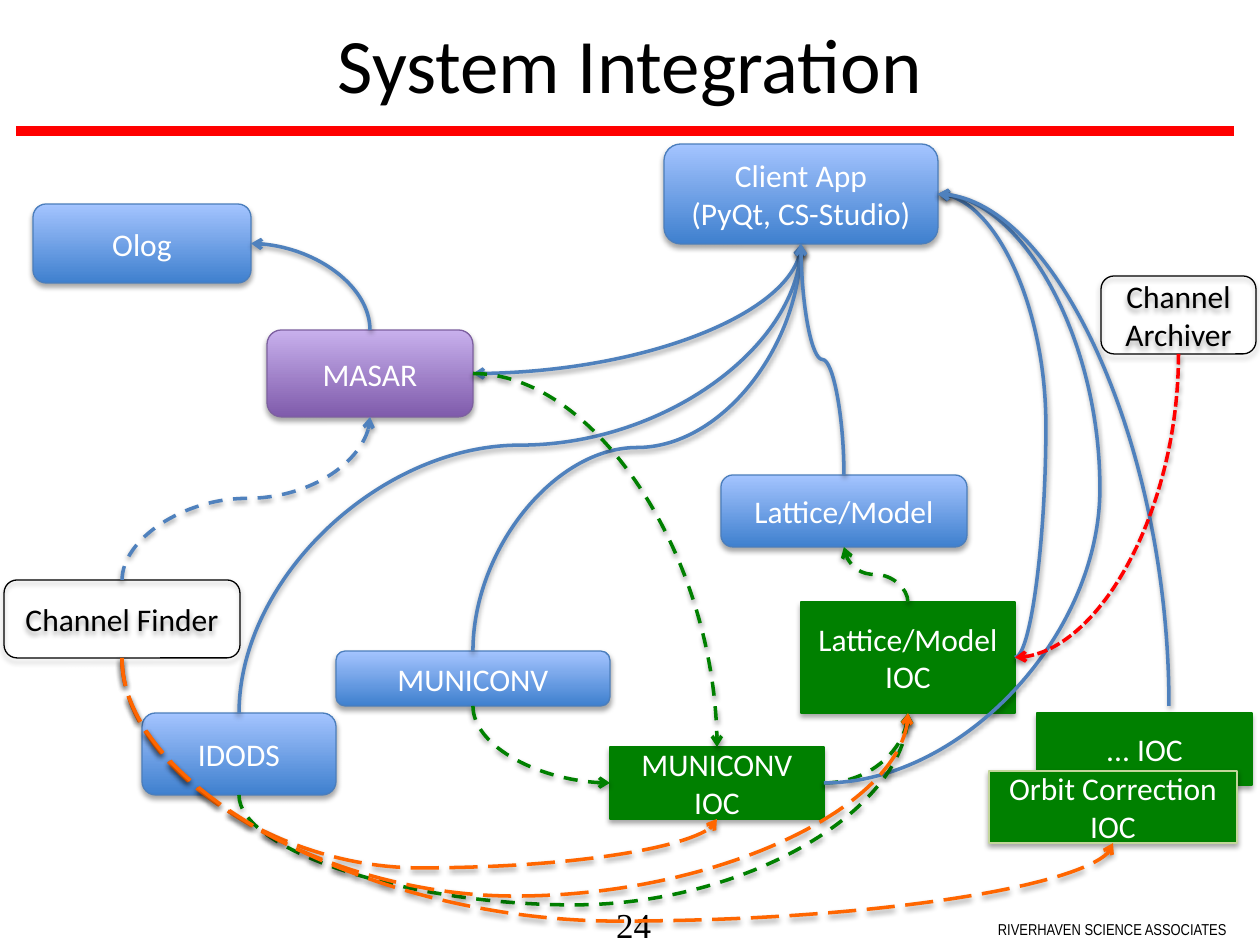
from dataclasses import dataclass

from lxml.etree import SubElement
from pptx import Presentation
from pptx.dml.color import RGBColor
from pptx.enum.dml import MSO_LINE
from pptx.enum.shapes import MSO_CONNECTOR, MSO_SHAPE
from pptx.enum.text import MSO_ANCHOR, PP_ALIGN
from pptx.oxml.ns import qn
from pptx.util import Pt

PX = 914400 / 126


@dataclass(frozen=True)
class Theme:
    font: str = "Calibri"
    black: str = "000000"
    white: str = "FFFFFF"
    red: str = "FF0000"
    blue: str = "4F81BD"
    green: str = "008000"
    orange: str = "FF6600"
    title: int = 44
    body: int = 18
    page: int = 20
    foot: int = 9


T = Theme()

# Box styles: shape, fill colours (bottom, top), line, line width, text
ROUND, RECT = MSO_SHAPE.ROUNDED_RECTANGLE, MSO_SHAPE.RECTANGLE
LOOKS = {
    "app": (ROUND, ("3F80CE", "A4C4FF"), "4B7EBC", 0.75, T.white),
    "core": (ROUND, ("7F5BAB", "C8B0ED"), "7D60A0", 0.75, T.white),
    "ioc": (RECT, (T.green,), T.green, 0.75, T.white),
    "orbit": (RECT, (T.green,), "C3D69B", 1, T.white),
    "plain": (ROUND, (), T.black, 0.75, T.black),
}

# Boxes: look, text, left, top, width, height
BOXES = {
    "idods": ("app", "IDODS", 142, 713, 194, 82),
    "masar": ("core", "MASAR", 267, 330, 206, 87),
    "model": ("app", "Lattice/Model", 721, 475, 246, 72),
    "muni": ("app", "MUNICONV", 336, 651, 274, 55),
    "client": ("app", "Client App\n(PyQt, CS-Studio)", 664, 144, 274, 100),
    "muni ioc": ("ioc", "MUNICONV\nIOC", 610, 747, 214, 72),
    "olog": ("app", "Olog", 33, 204, 218, 79),
    "model ioc": ("ioc", "Lattice/Model\nIOC", 801, 602, 214, 111),
    "more ioc": ("ioc", "... IOC", 1037, 713, 215, 72),
    "orbit": ("orbit", "Orbit Correction IOC", 989, 771, 248, 72),
    "finder": ("plain", "Channel Finder", 4, 580, 236, 78),
    "archive": ("plain", "Channel Archiver", 1101, 276, 155, 78),
}

# Link styles: colour, dash
LINKS = {
    "call": (T.blue, None),
    "find": (T.blue, MSO_LINE.DASH),
    "data": (T.green, MSO_LINE.DASH),
    "name": (T.orange, MSO_LINE.LONG_DASH),
    "log": (T.red, MSO_LINE.SQUARE_DOT),
}

# Curves: link style, start, end (box and side), options
CURVES = [
    ("find", "finder.t", "masar.b", {}),
    ("call", "client.b", "masar.r", {"both": True}),
    ("call", "idods.t", "client.b", {"bend": 445}),
    ("call", "muni.t", "client.b", {}),
    ("call", "model.t", "client.b", {}),
    ("call", "model ioc.r", "client.r", {"bend": 1046}),
    ("data", "muni ioc.r", "model ioc.b", {}),
    ("call", "masar.t", "olog.r", {}),
    ("call", "muni ioc.r", "client.r", {"bend": 1100}),
    ("data", "model ioc.t", "model.b", {}),
    ("data", "muni.b", "muni ioc.l", {}),
    ("data", "idods.b", "model ioc.b", {"bend": 905}),
    ("data", "masar.r", "muni ioc.t", {}),
    ("name", "finder.b", "muni ioc.b", {"bend": 868}),
    ("name", "finder.b", "model ioc.b", {"bend": 896}),
    ("name", "finder.b", "orbit.b", {"bend": 921}),
    ("call", (1169, 706, "t"), "client.r", {}),
    ("log", "archive.b", "model ioc.r", {}),
]


def px(*vals):
    return [round(v * PX) for v in vals]


def rgb(code):
    return RGBColor.from_string(code)


def write(frame, text, size=T.body, color=T.black, font=T.font,
          align=PP_ALIGN.CENTER, anchor=MSO_ANCHOR.MIDDLE, wrap=True):
    frame.word_wrap = wrap
    frame.vertical_anchor = anchor
    frame.text = text
    for para in frame.paragraphs:
        para.alignment = align
        para.font.size = Pt(size)
        para.font.name = font
        para.font.color.rgb = rgb(color)


def shade(shape, alpha, dist):
    """Add a soft shadow straight below."""
    fx = SubElement(shape.element.spPr, qn("a:effectLst"))
    cast = SubElement(fx, qn("a:outerShdw"), blurRad=str(Pt(3.1)),
                      dist=str(Pt(dist)), dir="5400000", rotWithShape="0")
    tint = SubElement(cast, qn("a:srgbClr"), val=T.black)
    SubElement(tint, qn("a:alpha"), val=str(alpha * 1000))


def box(slide, look, text, *rect):
    kind, fills, edge, width, ink = LOOKS[look]
    shape = slide.shapes.add_shape(kind, *px(*rect))
    if len(fills) == 2:
        shape.fill.gradient()
        shape.fill.gradient_angle = 90
        for stop, code in zip(shape.fill.gradient_stops, fills):
            stop.color.rgb = rgb(code)
    elif fills:
        shape.fill.solid()
        shape.fill.fore_color.rgb = rgb(fills[0])
    else:
        shape.fill.background()
    shape.line.color.rgb = rgb(edge)
    shape.line.width = Pt(width)
    shade(shape, 35, 1.8)
    write(shape.text_frame, text, color=ink)


def port(end):
    """Give x, y and side of a link's end."""
    if isinstance(end, tuple):
        return end
    name, side = end.split(".")
    x, y, w, h = BOXES[name][2:]
    dx, dy = {"t": (0.5, 0), "b": (0.5, 1), "l": (0, 0.5), "r": (1, 0.5)}[side]
    return x + w * dx, y + h * dy, side


def curve(slide, link, start, end, bend=None, both=False):
    x1, y1, out = port(start)
    x2, y2, into = port(end)
    dx, dy = x2 - x1, y2 - y1
    steep = out in "tb"
    pts = (x1, y1, x2, y2)
    if steep:  # laid flat about its centre, then turned a quarter
        cx, cy = (x1 + x2) / 2, (y1 + y2) / 2
        pts = (cx - dy / 2, cy + dx / 2, cx + dy / 2, cy - dx / 2)
    line = slide.shapes.add_connector(MSO_CONNECTOR.CURVE, *px(*pts))
    props = line.element.spPr
    if steep:
        props.find(qn("a:xfrm")).set("rot", "5400000")
    geom = props.find(qn("a:prstGeom"))
    if steep != (into in "tb"):
        geom.set("prst", "curvedConnector2")
    elif bend is not None:
        part = (bend - y1) / dy if steep else (bend - x1) / dx
        SubElement(geom.find(qn("a:avLst")), qn("a:gd"), name="adj1",
                   fmla=f"val {round(part * 100000)}")
    color, dash = LINKS[link]
    line.line.color.rgb = rgb(color)
    line.line.width = Pt(2)
    if dash:
        line.line.dash_style = dash
    tips = ("a:headEnd", "a:tailEnd") if both else ("a:tailEnd",)
    for tip in tips:
        SubElement(props.find(qn("a:ln")), qn(tip), type="arrow")
    shade(line, 38, 1.6)


def rule(slide, *pts):
    line = slide.shapes.add_connector(MSO_CONNECTOR.STRAIGHT, *px(*pts))
    line.line.color.rgb = rgb(T.red)
    line.line.width = Pt(6)
    SubElement(line.element.spPr, qn("a:effectLst"))


def label(slide, text, rect, **form):
    frame = slide.shapes.add_textbox(*px(*rect)).text_frame
    frame.margin_left = frame.margin_right = 0
    frame.margin_top = frame.margin_bottom = 0
    write(frame, text, align=PP_ALIGN.LEFT, anchor=MSO_ANCHOR.TOP,
          wrap=False, **form)


def main():
    deck = Presentation()
    deck.slide_width, deck.slide_height = px(1260, 945)
    slide = deck.slides.add_slide(deck.slide_layouts[5])

    # Title, red rule and footer
    head = slide.shapes.title
    head.left, head.top, head.width, head.height = px(0, 0, 1260, 125)
    write(head.text_frame, "System Integration", size=T.title)
    rule(slide, 1234, 131, 16, 131)
    label(slide, "24", (616, 903, 54, 42), size=T.page, font="Times New Roman")
    label(slide, "RIVERHAVEN SCIENCE ASSOCIATES", (998, 920, 242, 19),
          size=T.foot, font="Arial Narrow")

    # Services, then the links over them
    for item in BOXES.values():
        box(slide, *item)
    for link, start, end, opts in CURVES:
        curve(slide, link, start, end, **opts)

    deck.save("out.pptx")


if __name__ == "__main__":
    main()
